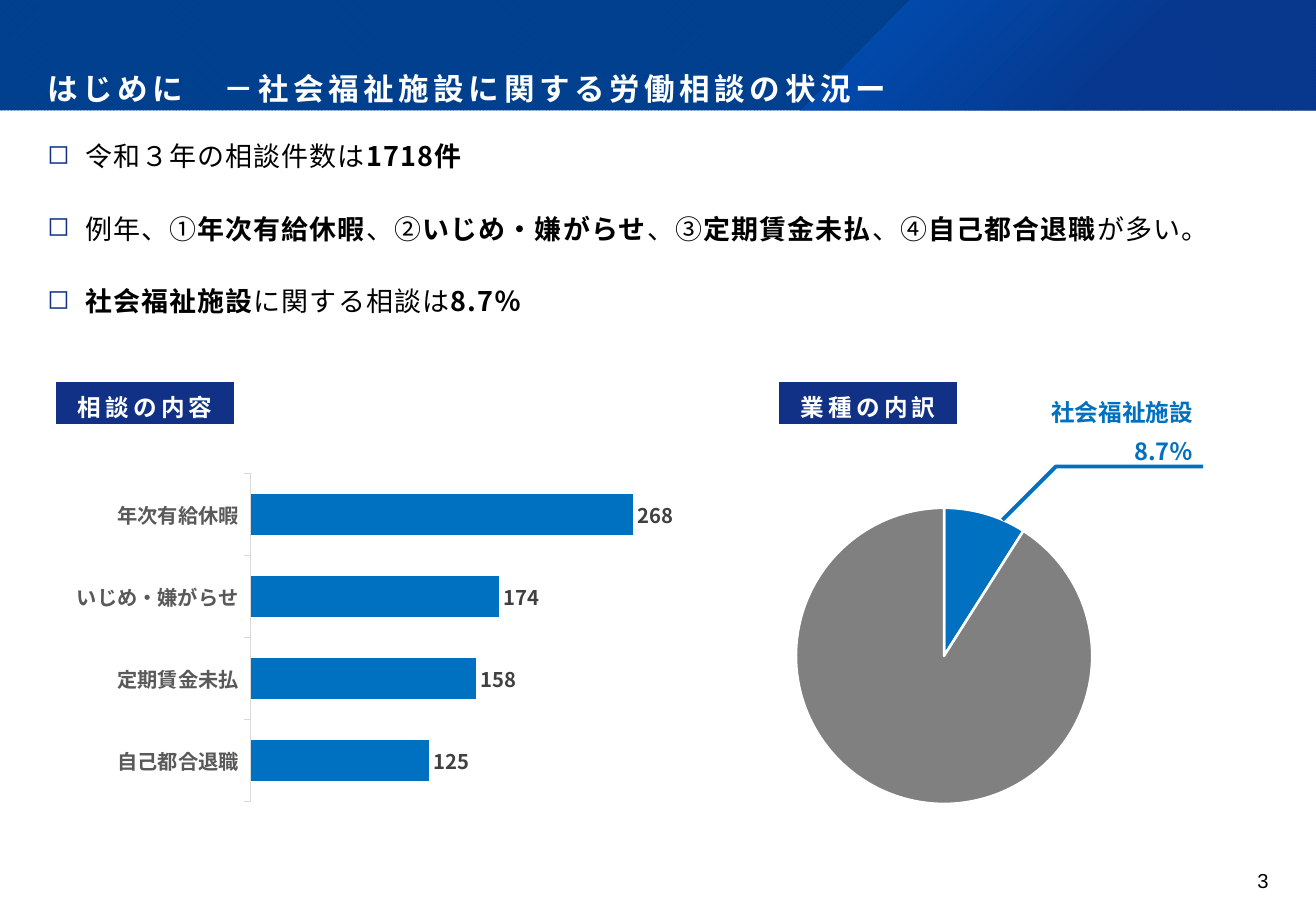
from lxml import etree
from pptx import Presentation
from pptx.chart.data import CategoryChartData
from pptx.dml.color import RGBColor
from pptx.enum.chart import XL_CHART_TYPE, XL_LABEL_POSITION, XL_TICK_LABEL_POSITION, XL_TICK_MARK
from pptx.enum.dml import MSO_PATTERN
from pptx.enum.shapes import MSO_SHAPE
from pptx.enum.text import MSO_ANCHOR, PP_ALIGN
from pptx.oxml import parse_xml
from pptx.oxml.ns import qn
from pptx.util import Inches, Pt

BAR, PIE = XL_CHART_TYPE.BAR_CLUSTERED, XL_CHART_TYPE.PIE
OUTSIDE_END = XL_LABEL_POSITION.OUTSIDE_END
LABELS_LOW = XL_TICK_LABEL_POSITION.LOW
TICK_OUT, TICK_NONE = XL_TICK_MARK.OUTSIDE, XL_TICK_MARK.NONE
DIAGONAL = MSO_PATTERN.DARK_UPWARD_DIAGONAL
RECTANGLE = MSO_SHAPE.RECTANGLE
TOP, MIDDLE, BOTTOM = MSO_ANCHOR.TOP, MSO_ANCHOR.MIDDLE, MSO_ANCHOR.BOTTOM
LEFT, CENTER, RIGHT = PP_ALIGN.LEFT, PP_ALIGN.CENTER, PP_ALIGN.RIGHT

WIDTH, HEIGHT, BANNER_HEIGHT = 10.83, 7.5, 0.91
JAPANESE = "Noto Sans CJK JP"
DRAWING = "http://schemas.openxmlformats.org/drawingml/2006/main"
COLORS = {
    "white": "FFFFFF", "black": "000000", "navy": "103185", "blue": "0070C0",
    "gray": "808080", "axis": "D9D9D9", "axis text": "595959", "value text": "404040",
    "banner": "004292", "banner stripe": "003579", "glow": "0064DF", "glow edge": "0C338E",
}


def rgb(name):
    return RGBColor.from_string(COLORS[name])


class SlideBuilder:
    def __init__(self, slide):
        self.slide = slide
        self.shapes = slide.shapes

    def style_font(self, font, size, color, bold=False, name=JAPANESE, spacing=0):
        """Set Latin and East Asian typefaces alike; spacing is in points."""
        font.size, font.bold, font.name = Pt(size), bold, name
        font.color.rgb = rgb(color)
        properties = font._rPr
        if spacing:
            properties.set("spc", str(round(spacing * 100)))
        east_asian = etree.Element(qn("a:ea"), typeface=name)
        properties.find(qn("a:latin")).addnext(east_asian)

    def fill_text(self, frame, lines, size, color, align=LEFT, line_spacing=None,
                  before=0, after=0, bullet=None, **font):
        """Fill a text frame; parts between asterisks are bold."""
        for index, line in enumerate(lines):
            para = frame.paragraphs[0] if index == 0 else frame.add_paragraph()
            para.alignment = align
            if line_spacing:
                para.line_spacing = line_spacing
            para.space_before = Pt(before if index else 0)
            para.space_after = Pt(after)
            if bullet:
                self.add_bullet(para, bullet)
            self.style_font(para.font, size, color, **font)
            for position, part in enumerate(line.split("*")):
                if part:
                    span = para.add_run()
                    span.text = part
                    if position % 2:
                        span.font.bold = True

    def add_bullet(self, para, character):
        properties = para._p.get_or_add_pPr()
        properties.set("marL", str(Inches(0.31)))
        properties.set("indent", str(-Inches(0.31)))
        color = etree.SubElement(properties, qn("a:buClr"))
        etree.SubElement(color, qn("a:srgbClr"), val=COLORS["navy"])
        etree.SubElement(properties, qn("a:buChar"), char=character)

    def text(self, area, lines, size, color, insets=(0.1, 0.05, 0.1, 0.05), anchor=TOP, **style):
        box = self.shapes.add_textbox(*map(Inches, area))
        frame = box.text_frame
        frame.word_wrap, frame.vertical_anchor = True, anchor
        (frame.margin_left, frame.margin_top,
         frame.margin_right, frame.margin_bottom) = map(Inches, insets)
        self.fill_text(frame, lines, size, color, **style)

    def banner(self):
        band = self.shapes.add_shape(RECTANGLE, 0, 0, Inches(WIDTH), Inches(BANNER_HEIGHT))
        band.shadow.inherit = False
        band.fill.patterned()
        band.fill.pattern = DIAGONAL
        band.fill.fore_color.rgb = rgb("banner stripe")
        band.fill.back_color.rgb = rgb("banner")
        band.line.fill.background()

        glow = self.outline([(7.49, 0), (WIDTH, 0), (WIDTH, BANNER_HEIGHT),
                             (6.58, BANNER_HEIGHT)], close=True)
        glow.line.fill.background()
        stops = "".join(
            f'<a:gs pos="{place}000"><a:srgbClr val="{COLORS[color]}">'
            f'<a:alpha val="{alpha}000"/></a:srgbClr></a:gs>'
            for place, color, alpha in ((0, "glow", 50), (62, "glow edge", 55)))
        gradient = parse_xml(
            f'<a:gradFill xmlns:a="{DRAWING}"><a:gsLst>{stops}</a:gsLst><a:path path="circle">'
            '<a:fillToRect r="100000" b="100000"/></a:path></a:gradFill>')
        glow._element.spPr.find(qn("a:custGeom")).addnext(gradient)

    def outline(self, points, close):
        start, *rest = [(Inches(x), Inches(y)) for x, y in points]
        builder = self.shapes.build_freeform(*start)
        builder.add_line_segments(rest, close=close)
        shape = builder.convert_to_shape()
        shape.shadow.inherit = False
        return shape

    def callout_line(self, points):
        line = self.outline(points, close=False)
        line.fill.background()
        line.line.color.rgb = rgb("blue")
        line.line.width = Pt(2.25)

    def heading(self, left, label):
        tag = self.shapes.add_shape(RECTANGLE, *map(Inches, (left, 3.1, 1.55, 0.43)))
        tag.shadow.inherit = False
        tag.fill.solid()
        tag.fill.fore_color.rgb = rgb("navy")
        tag.line.color.rgb = rgb("white")
        tag.line.width = Pt(6)
        tag.text_frame.vertical_anchor = MIDDLE
        self.fill_text(tag.text_frame, [label], 14, "white", align=CENTER, line_spacing=1.3,
                       after=8, bold=True, spacing=2.4)

    def chart(self, kind, area, values, plot_area, size):
        data = CategoryChartData()
        data.categories = list(values)
        data.add_series("相談", list(values.values()))
        chart = self.shapes.add_chart(kind, *map(Inches, area), data).chart
        chart.has_legend = chart.has_title = False
        self.style_font(chart.font, size, "black")
        self.place_plot(chart, plot_area)
        return chart

    def place_plot(self, chart, plot_area):
        plot = chart._chartSpace.find(".//" + qn("c:plotArea"))
        for old in plot.findall(qn("c:layout")):
            plot.remove(old)
        layout = etree.Element(qn("c:layout"))
        manual = etree.SubElement(layout, qn("c:manualLayout"))
        settings = [("layoutTarget", "inner"), ("xMode", "edge"), ("yMode", "edge")]
        for tag, value in settings + list(zip("xywh", plot_area)):
            etree.SubElement(manual, qn("c:" + tag), val=str(value))
        plot.insert(0, layout)

    def bar_chart(self, area, values):
        chart = self.chart(BAR, area, values, (0.32, 0.03, 0.65, 0.9), 12)
        plot = chart.plots[0]
        plot.gap_width, plot.vary_by_categories = 100, False
        fill = plot.series[0].format.fill
        fill.solid()
        fill.fore_color.rgb = rgb("blue")
        plot.has_data_labels = True
        labels = plot.data_labels
        labels.show_value, labels.position = True, OUTSIDE_END
        self.style_font(labels.font, 12, "value text", bold=True)
        names, counts = chart.category_axis, chart.value_axis
        names.major_tick_mark, names.minor_tick_mark = TICK_OUT, TICK_NONE
        names.tick_label_position = LABELS_LOW
        names.format.line.color.rgb = rgb("axis")
        names.format.line.width = Pt(0.75)
        self.style_font(names.tick_labels.font, 12, "axis text", bold=True)
        counts.minimum_scale, counts.maximum_scale = 0, 300
        counts.has_major_gridlines = counts.visible = False

    def pie_chart(self, area, values, colors):
        chart = self.chart(PIE, area, values, (0.1, 0.03, 0.82, 0.9), 10)
        for index, color in enumerate(colors):
            slice_format = chart.plots[0].series[0].points[index].format
            slice_format.fill.solid()
            slice_format.fill.fore_color.rgb = rgb(color)
            slice_format.line.color.rgb = rgb("white")
            slice_format.line.width = Pt(1.5)


def main():
    deck = Presentation()
    deck.slide_width, deck.slide_height = Inches(WIDTH), Inches(HEIGHT)
    page = SlideBuilder(deck.slides.add_slide(deck.slide_layouts[6]))

    page.banner()
    page.text((0, 0, WIDTH, BANNER_HEIGHT), ["はじめに　－社会福祉施設に関する労働相談の状況ー"],
              18.1, "white", insets=(0.39, 0.36, 0.36, 0.14), anchor=BOTTOM,
              line_spacing=0.9, bold=True, spacing=2.7)
    page.text((0, BANNER_HEIGHT, WIDTH, 1.87), [
        "令和３年の相談件数は*1718件*",
        "例年、①*年次有給休暇*、②*いじめ・嫌がらせ*、③*定期賃金未払*、④*自己都合退職*が多い。",
        "*社会福祉施設*に関する相談は*8.7％*",
    ], 16, "black", insets=(0.39, 0.16, 0.39, 0.16), line_spacing=1.3, before=10, after=8,
        bullet="◻", spacing=0.7)

    page.bar_chart((0.33, 3.81, 5.42, 3), {
        "自己都合退職": 125, "定期賃金未払": 158, "いじめ・嫌がらせ": 174, "年次有給休暇": 268})
    page.pie_chart((6.25, 4.1, 2.98, 2.71), {"1": 9, "2": 91}, ("blue", "gray"))
    page.heading(0.42, "相談の内容")
    page.heading(6.37, "業種の内訳")
    page.callout_line([(8.25, 4.28), (8.69, 3.84), (9.9, 3.84)])
    page.text((8.25, 3.23, 1.67, 0.66), ["社会福祉施設", "8.7％"], 14, "blue",
              align=RIGHT, after=6, bold=True)
    page.text((9.75, 7.15, 0.69, 0.3), ["3"], 12, "black", insets=(0, 0, 0, 0),
              align=RIGHT, name="Arial")
    deck.save("out.pptx")


if __name__ == "__main__":
    main()
